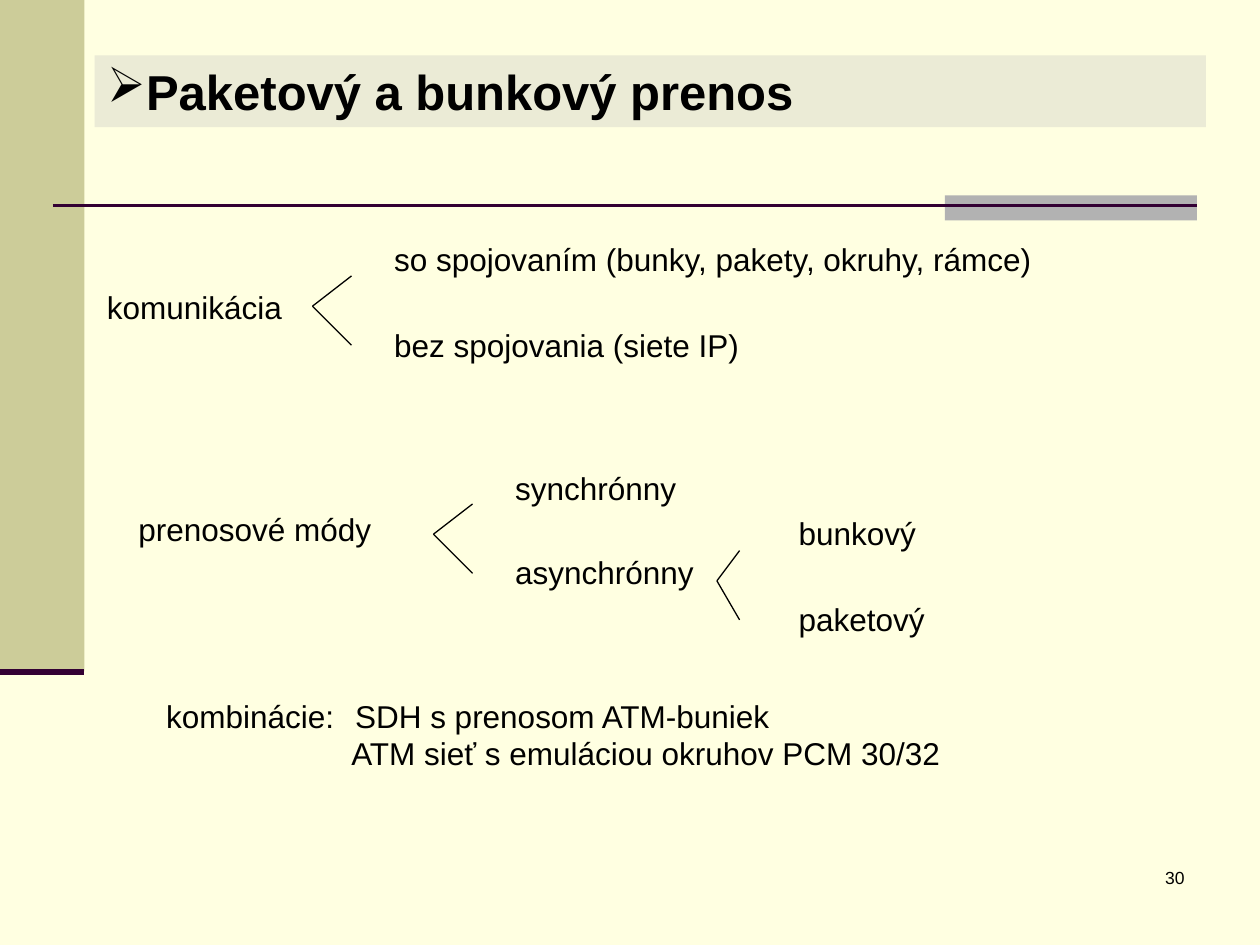
import pptx
import pptx.util
import pptx.dml.color
import pptx.enum.shapes
import pptx.enum.text
import pptx.oxml.xmlchemy
from pptx.util import Inches

# Content: texts with left, top, width
TITLE = "Paketový a bunkový prenos"
LABELS = [
    ("komunikácia", 0.75, 2.24, 1.73),
    ("so spojovaním (bunky, pakety, okruhy, rámce)", 3.03, 1.86, 5.51),
    ("bez spojovania (siete IP)", 3.03, 2.54, 3.07),
    ("prenosové módy", 1, 4, 2.26),
    ("synchrónny", 3.99, 3.67, 3.07),
    ("asynchrónny", 3.99, 4.34, 3.07),
    ("bunkový", 6.24, 4.03, 1.75),
    ("paketový", 6.24, 4.71, 1.75),
]
COMBINATIONS = ["kombinácie:\tSDH s prenosom ATM-buniek",
                "ATM sieť s emuláciou okruhov PCM 30/32"]
PAGE_NUMBER = "30"
# Forks: tip x, tip y, width
FORKS = [(2.48, 2.43, 0.31), (3.44, 4.24, 0.31), (5.69, 4.61, 0.18)]
FORK_RISE, FORK_DROP = 0.24, 0.31

THEME = {
    "font": "Arial", "title": 28, "body": 18, "small": 10,
    "background": "FFFFE1", "text": "000000", "band": "CCCC99",
    "accent": "B2B2B2", "rule": "330033", "title_fill": "EBEBD6",
}


def color(name):
    return pptx.dml.color.RGBColor.from_string(THEME[name])


def place(shape, left, top, width, height):
    shape.left, shape.top = Inches(left), Inches(top)
    shape.width, shape.height = Inches(width), Inches(height)


def write(shape, text, size="body", bold=False, align="LEFT"):
    frame = shape.text_frame
    frame.word_wrap = True
    frame.auto_size = pptx.enum.text.MSO_AUTO_SIZE.NONE
    frame.vertical_anchor = pptx.enum.text.MSO_ANCHOR.TOP
    frame.text = text
    for paragraph in frame.paragraphs:
        paragraph.alignment = getattr(pptx.enum.text.PP_ALIGN, align)
        font = paragraph.runs[0].font
        font.name, font.size, font.bold = THEME["font"], pptx.util.Pt(THEME[size]), bold
        font.color.rgb = color("text")
    return frame


def add_text(slide, text, left, top, width, height=0.4, **text_format):
    box = slide.shapes.add_textbox(*map(Inches, (left, top, width, height)))
    return write(box, text, **text_format)


def add_block(slide, left, top, width, height, fill):
    block = slide.shapes.add_shape(pptx.enum.shapes.MSO_SHAPE.RECTANGLE,
                                   *map(Inches, (left, top, width, height)))
    block.shadow.inherit = False
    block.fill.solid()
    block.fill.fore_color.rgb = color(fill)
    block.line.fill.background()


def add_child(parent, tag, **attributes):
    child = pptx.oxml.xmlchemy.OxmlElement(tag)
    for name, value in attributes.items():
        child.set(name, str(value))
    parent.append(child)
    return child


def add_line(slide, x1, y1, x2, y2, line="text", weight=0.75):
    connector = slide.shapes.add_connector(pptx.enum.shapes.MSO_CONNECTOR.STRAIGHT,
                                           *map(Inches, (x1, y1, x2, y2)))
    connector.line.color.rgb = color(line)
    connector.line.width = pptx.util.Pt(weight)
    add_child(connector._element.spPr, "a:effectLst")


def indent(paragraph, margin, first=0):
    properties = paragraph._p.get_or_add_pPr()
    properties.set("marL", str(Inches(margin)))
    properties.set("indent", str(Inches(first)))
    return properties


def main():
    presentation = pptx.Presentation()
    presentation.slide_width, presentation.slide_height = Inches(10), Inches(7.5)
    slide = presentation.slides.add_slide(presentation.slide_layouts[5])
    slide.background.fill.solid()
    slide.background.fill.fore_color.rgb = color("background")

    # Decoration
    add_block(slide, 0, 0, 0.67, 5.33, "band")
    add_block(slide, 7.5, 1.55, 2, 0.2, "accent")
    add_line(slide, 0.42, 1.63, 9.5, 1.63, "rule", 1.5)
    add_line(slide, 0, 5.33, 0.67, 5.33, "rule", 3.5)

    # Title with arrow bullet
    title = slide.shapes.title
    place(title, 0.75, 0.44, 8.82, 0.57)
    title.fill.solid()
    title.fill.fore_color.rgb = color("title_fill")
    heading = write(title, TITLE, size="title", bold=True).paragraphs[0]
    add_child(indent(heading, 0.31, -0.31), "a:buChar", char="➢")

    # Tree labels and forks
    for label in LABELS:
        add_text(slide, *label)
    for x, y, width in FORKS:
        for end in (y - FORK_RISE, y + FORK_DROP):
            add_line(slide, x, y, x + width, end)

    # Combinations, aligned by a tab stop and an indent
    frame = add_text(slide, "\n".join(COMBINATIONS), 1.22, 5.48, 7.56, 0.71)
    first, second = frame.paragraphs
    tabs = add_child(indent(first, 0), "a:tabLst")
    add_child(tabs, "a:tab", pos=Inches(1.54), algn="l")
    indent(second, 1.47)

    # Page number
    add_text(slide, PAGE_NUMBER, 7.42, 6.83, 2.08, 0.5, size="small", align="RIGHT")
    presentation.save("out.pptx")


if __name__ == "__main__":
    main()
